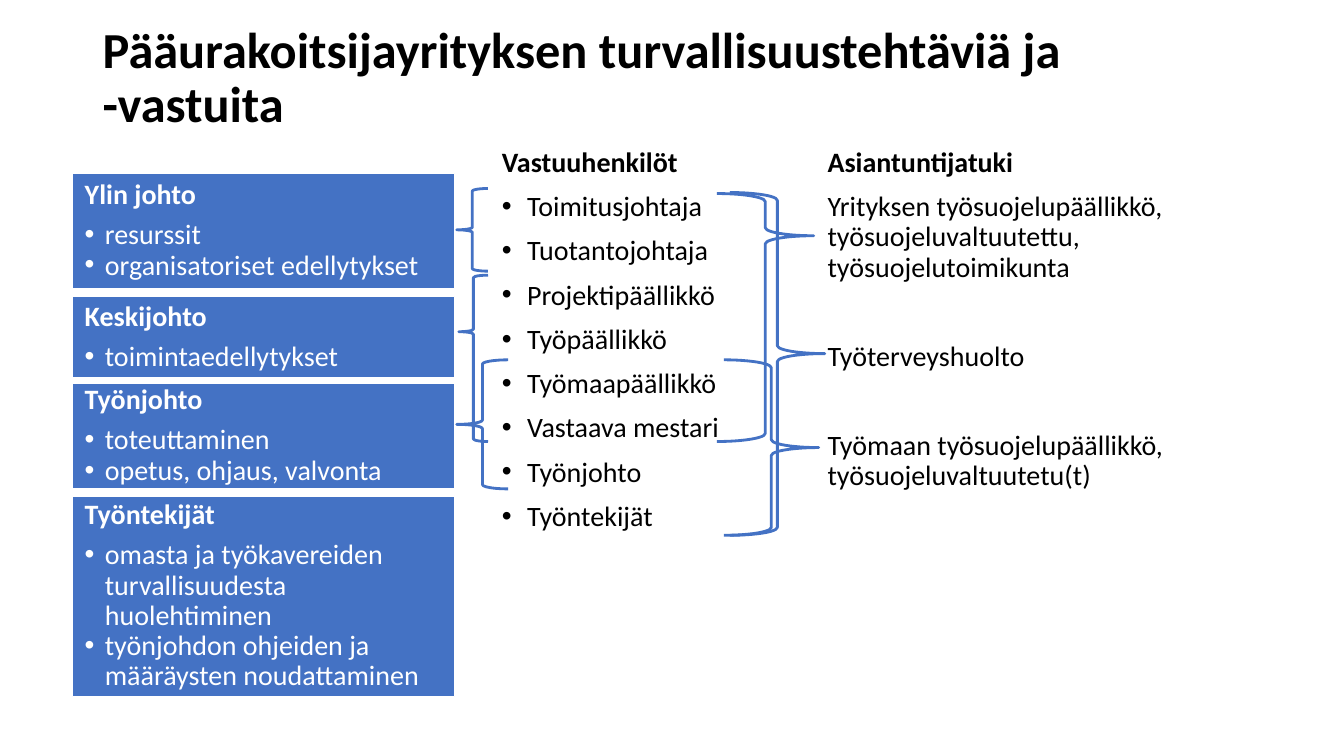
"""Build the slide on the main contractor's safety duties and responsibilities."""
from dataclasses import dataclass

from lxml import etree
from pptx import Presentation
from pptx.dml.color import RGBColor
from pptx.enum import shapes, text
from pptx.oxml import ns
from pptx.util import Inches, Pt


@dataclass(frozen=True)
class Theme:
    font: str = "Calibri"
    blue: RGBColor = RGBColor(0x44, 0x72, 0xC4)
    white: RGBColor = RGBColor(255, 255, 255)
    black: RGBColor = RGBColor(0, 0, 0)
    title: int = 36
    body: int = 20
    spacing: float = 0.9


@dataclass(frozen=True)
class Line:
    text: str
    bold: bool = False
    indent: float = 0
    before: float = 0
    after: float = 0


@dataclass(frozen=True)
class Level:
    top: float
    height: float
    name: str
    duties: tuple[str, ...]


@dataclass(frozen=True)
class Brace:
    left: float
    top: float
    width: float
    height: float
    tip: float = 0.5
    rotation: int = 0


THEME = Theme()
LEVEL_LEFT, LEVEL_WIDTH = 0.72, 3.79
COLUMN_TOP, COLUMN_HEIGHT = 1.42, 4.76
GAP, WIDE_GAP = 10, 42

LEVELS = (
    Level(1.72, 1.14, "Ylin johto", ("resurssit", "organisatoriset edellytykset")),
    Level(2.94, 0.81, "Keskijohto", ("toimintaedellytykset",)),
    Level(3.8, 1.05, "Työnjohto", ("toteuttaminen", "opetus, ohjaus, valvonta")),
    Level(4.92, 1.99, "Työntekijät", (
        "omasta ja työkavereiden turvallisuudesta huolehtiminen",
        "työnjohdon ohjeiden ja määräysten noudattaminen")),
)
PERSONS = ("Toimitusjohtaja", "Tuotantojohtaja", "Projektipäällikkö", "Työpäällikkö",
           "Työmaapäällikkö", "Vastaava mestari", "Työnjohto", "Työntekijät")
EXPERTS = (
    Line("Asiantuntijatuki", bold=True, before=GAP),
    Line("Yrityksen työsuojelupäällikkö, työsuojeluvaltuutettu, työsuojelutoimikunta",
         before=GAP),
    Line("Työterveyshuolto", before=WIDE_GAP),
    Line("Työmaan työsuojelupäällikkö, työsuojeluvaltuutetu(t)", before=WIDE_GAP),
)
BRACES = (
    Brace(4.53, 1.87, 0.31, 0.82),
    Brace(4.55, 2.73, 0.29, 1.65, tip=0.34),
    Brace(4.53, 3.57, 0.51, 1.28),
    Brace(7.11, 1.92, 0.96, 2.46, tip=0.83, rotation=180),
    Brace(7.18, 3.57, 0.94, 1.74, rotation=180),
    Brace(7.24, 1.91, 0.94, 3.4, tip=0.53, rotation=180),
)


def add_bullet(p, indent: float) -> None:
    """Give a paragraph a bullet with a hanging indent."""
    pPr = p._p.get_or_add_pPr()
    pPr.set("marL", str(Inches(indent)))
    pPr.set("indent", str(-Inches(indent)))
    etree.SubElement(pPr, ns.qn("a:buFont")).set("typeface", "Arial")
    etree.SubElement(pPr, ns.qn("a:buChar")).set("char", "•")


def write(tf, lines: list[Line], color: RGBColor, size: int) -> None:
    """Fill a text frame with formatted lines."""
    tf.word_wrap = True
    tf.text = "\n".join(line.text for line in lines)
    for p, line in zip(tf.paragraphs, lines):
        p.alignment = text.PP_ALIGN.LEFT
        p.line_spacing = THEME.spacing
        p.space_before, p.space_after = Pt(line.before), Pt(line.after)
        if line.indent:
            add_bullet(p, line.indent)
        for r in p.runs:
            r.font.name, r.font.size = THEME.font, Pt(size)
            r.font.bold = line.bold
            r.font.color.rgb = color


def add_text(slide, left: float, top: float, width: float, height: float,
             lines: list[Line], size: int):
    """Add a black text box and return its text frame."""
    sp = slide.shapes.add_textbox(Inches(left), Inches(top), Inches(width), Inches(height))
    write(sp.text_frame, lines, THEME.black, size)
    return sp.text_frame


def add_level(slide, level: Level) -> None:
    """Add a blue box with an organisation level and its duties."""
    sp = slide.shapes.add_shape(
        shapes.MSO_SHAPE.RECTANGLE, Inches(LEVEL_LEFT), Inches(level.top),
        Inches(LEVEL_WIDTH), Inches(level.height))
    sp.shadow.inherit = False
    sp.fill.solid()
    sp.fill.fore_color.rgb = THEME.blue
    sp.line.color.rgb = THEME.white
    sp.line.width = Pt(1)
    tf = sp.text_frame
    tf.margin_left = tf.margin_right = tf.margin_top = tf.margin_bottom = Inches(0.12)
    tf.vertical_anchor = text.MSO_ANCHOR.MIDDLE
    lines = [Line(level.name, bold=True, after=7)]
    lines += [Line(duty, indent=0.2) for duty in level.duties]
    write(tf, lines, THEME.white, THEME.body)


def add_brace(slide, brace: Brace) -> None:
    """Add a brace that joins persons to a level or to an expert."""
    sp = slide.shapes.add_shape(
        shapes.MSO_SHAPE.LEFT_BRACE, Inches(brace.left), Inches(brace.top),
        Inches(brace.width), Inches(brace.height))
    sp.shadow.inherit = False
    sp.fill.background()
    sp.line.color.rgb = THEME.blue
    sp.line.width = Pt(2)
    sp.adjustments[1] = brace.tip
    sp.rotation = brace.rotation


def main() -> None:
    """Draw and save the slide."""
    prs = Presentation()
    prs.slide_width, prs.slide_height = Inches(13.33), Inches(7.5)
    slide = prs.slides.add_slide(prs.slide_layouts[6])
    title = add_text(slide, 0.92, 0.06, 11.5, 1.45, [
        Line("Pääurakoitsijayrityksen turvallisuustehtäviä ja -vastuita", bold=True)],
        THEME.title)
    title.vertical_anchor = text.MSO_ANCHOR.MIDDLE
    for level in LEVELS:
        add_level(slide, level)
    persons = [Line("Vastuuhenkilöt", bold=True, before=GAP)]
    persons += [Line(person, indent=0.25, before=GAP) for person in PERSONS]
    add_text(slide, 4.88, COLUMN_TOP, 3.79, COLUMN_HEIGHT, persons, THEME.body)
    add_text(slide, 8.11, COLUMN_TOP, 4.6, COLUMN_HEIGHT, list(EXPERTS), THEME.body)
    for brace in BRACES:
        add_brace(slide, brace)
    prs.save("out.pptx")


if __name__ == "__main__":
    main()
